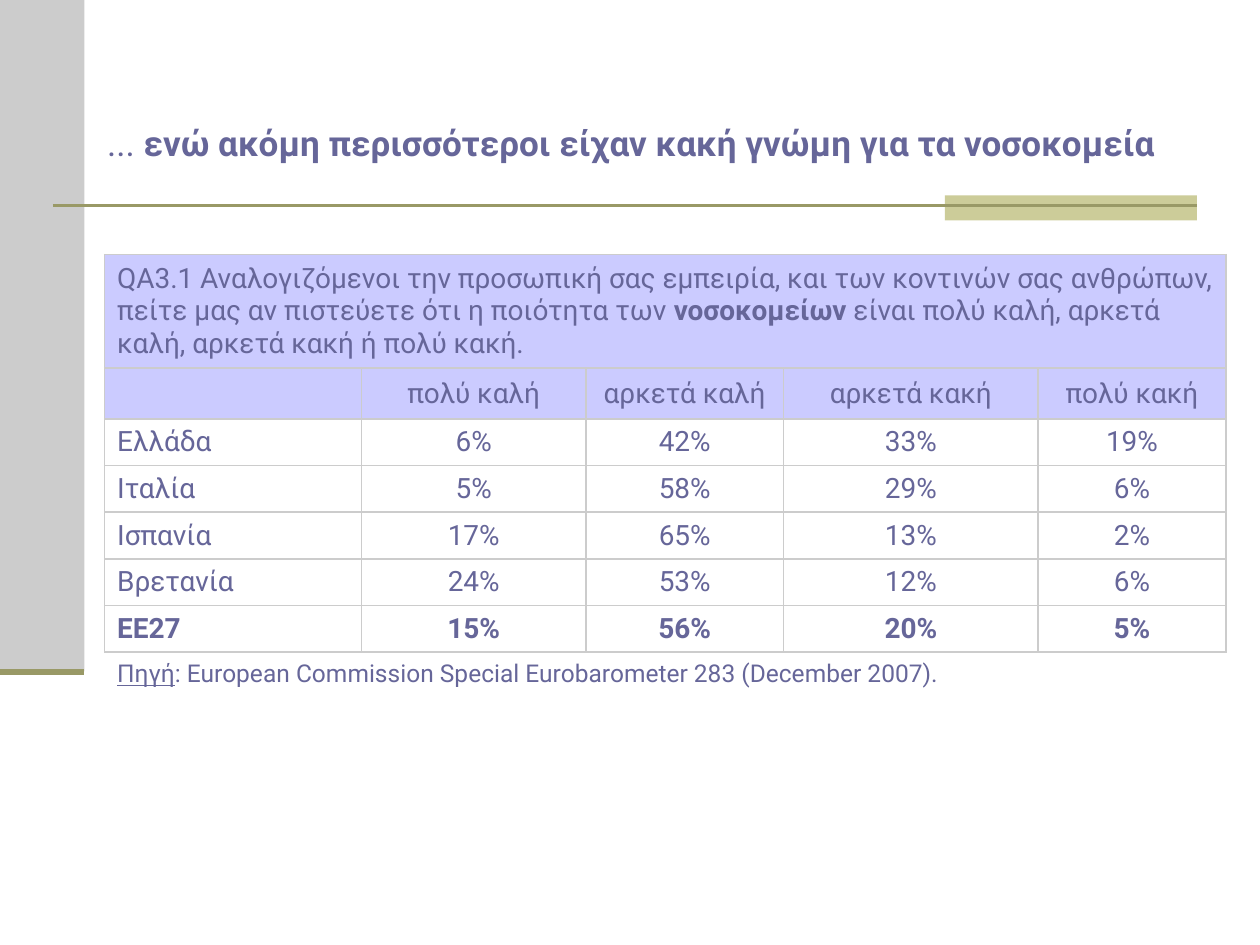
"""Build a slide with a table of opinions on hospital quality by country."""
from lxml.etree import SubElement
from pptx import Presentation
from pptx.dml.color import RGBColor
from pptx.enum.shapes import MSO_CONNECTOR, MSO_SHAPE
from pptx.enum.text import MSO_ANCHOR, MSO_AUTO_SIZE, PP_ALIGN
from pptx.oxml import parse_xml
from pptx.oxml.ns import nsdecls, qn
from pptx.util import Inches, Pt

FONT = "Roboto"
TEXT = RGBColor(0x66, 0x66, 0x99)
GREY = RGBColor(0xCC, 0xCC, 0xCC)
SAND = RGBColor(0xCC, 0xCC, 0x99)
OLIVE = RGBColor(0x99, 0x99, 0x66)
HEADER = RGBColor(0x99, 0x99, 0xFF)


def write_spans(paragraph, spans, size):
    paragraph.font.name = FONT
    paragraph.font.size = Pt(size)
    paragraph.font.color.rgb = TEXT
    for text, bold, underline in spans:
        span = paragraph.add_run()
        span.text = text
        span.font.bold = bold
        span.font.underline = underline


def set_borders(cell, visible_sides):
    for index, side in enumerate("LRTB"):
        if side in visible_sides:
            paint = f'<a:solidFill><a:srgbClr val="{GREY}"/></a:solidFill>'
        else:
            paint = "<a:noFill/>"
        border = parse_xml(f'<a:ln{side} {nsdecls("a")} w="12700">{paint}</a:ln{side}>')
        cell._tc.get_or_add_tcPr().insert(index, border)


deck = Presentation()
deck.slide_width, deck.slide_height = Inches(10), Inches(7.5)
page = deck.slides.add_slide(deck.slide_layouts[5])

for left, top, width, height, color in [
    (0, 0, 0.67, 5.33, GREY),
    (7.5, 1.55, 2, 0.2, SAND),
]:
    band = page.shapes.add_shape(
        MSO_SHAPE.RECTANGLE, Inches(left), Inches(top), Inches(width), Inches(height)
    )
    band.shadow.inherit = False
    band.fill.solid()
    band.fill.fore_color.rgb = color
    band.line.fill.background()

for start, end, height, weight in [(0.42, 9.5, 1.63, 1.5), (0, 0.67, 5.33, 3.5)]:
    rule = page.shapes.add_connector(
        MSO_CONNECTOR.STRAIGHT, Inches(start), Inches(height), Inches(end), Inches(height)
    )
    rule.line.color.rgb = OLIVE
    rule.line.width = Pt(weight)
    SubElement(rule._element.spPr, qn("a:effectLst"))

title = page.shapes.title
title.left, title.top = Inches(0.75), Inches(0.13)
title.width, title.height = Inches(9.25), Inches(1.55)
frame = title.text_frame
frame.auto_size = MSO_AUTO_SIZE.NONE
frame.word_wrap = True
frame.vertical_anchor = MSO_ANCHOR.BOTTOM
frame.margin_bottom = Inches(0.38)
heading = frame.paragraphs[0]
heading.alignment = PP_ALIGN.LEFT
write_spans(
    heading,
    [("... ", False, False),
     ("ενώ ακόμη περισσότεροι είχαν κακή γνώμη για τα νοσοκομεία", True, False)],
    20,
)
page.shapes._spTree.append(title._element)

question = [
    ("QA3.1 Αναλογιζόμενοι την προσωπική σας εμπειρία, και των κοντινών σας ανθρώπων, "
     "πείτε μας αν πιστεύετε ότι η ποιότητα των ", False, False),
    ("νοσοκομείων", True, False),
    (" είναι πολύ καλή, αρκετά καλή, αρκετά κακή ή πολύ κακή.", False, False),
]
source = [
    ("Πηγή", False, True),
    (": European Commission Special Eurobarometer 283 (December 2007).", False, False),
]
answers = [
    ["", "πολύ καλή", "αρκετά καλή", "αρκετά κακή", "πολύ κακή"],
    ["Ελλάδα", "6%", "42%", "33%", "19%"],
    ["Ιταλία", "5%", "58%", "29%", "6%"],
    ["Ισπανία", "17%", "65%", "13%", "2%"],
    ["Βρετανία", "24%", "53%", "12%", "6%"],
    ["ΕΕ27", "15%", "56%", "20%", "5%"],
]
column_widths = [2.04, 1.78, 1.57, 2.02, 1.49]
row_heights = [0.9] + [0.37] * 6 + [0.36]
last_row = len(row_heights) - 1

table = page.shapes.add_table(
    len(row_heights), len(column_widths),
    Inches(0.83), Inches(2.02), Inches(8.9), Inches(3.48),
).table
for column, width in zip(table.columns, column_widths):
    column.width = Inches(width)
for row, height in zip(table.rows, row_heights):
    row.height = Inches(height)

for row_index, row in enumerate(table.rows):
    for cell in row.cells:
        cell.vertical_anchor = MSO_ANCHOR.MIDDLE
        cell.margin_left = cell.margin_right = Inches(0.1)
        cell.margin_top = cell.margin_bottom = Inches(0.05)
        if row_index < 2:
            cell.fill.solid()
            cell.fill.fore_color.rgb = HEADER
            tint = cell._tc.tcPr.find(".//" + qn("a:srgbClr"))
            SubElement(tint, qn("a:alpha")).set("val", "50000")
        else:
            cell.fill.background()
        set_borders(cell, "T" if row_index == last_row else "LRTB")

for row_index, spans, size in [(0, question, 16), (last_row, source, 14)]:
    table.cell(row_index, 0).merge(table.cell(row_index, len(column_widths) - 1))
    write_spans(table.cell(row_index, 0).text_frame.paragraphs[0], spans, size)

for row_index, values in enumerate(answers, start=1):
    for column_index, value in enumerate(values):
        paragraph = table.cell(row_index, column_index).text_frame.paragraphs[0]
        paragraph.alignment = PP_ALIGN.CENTER if column_index else PP_ALIGN.LEFT
        if value:
            write_spans(paragraph, [(value, values[0] == "ΕΕ27", False)], 16)

deck.save("out.pptx")
